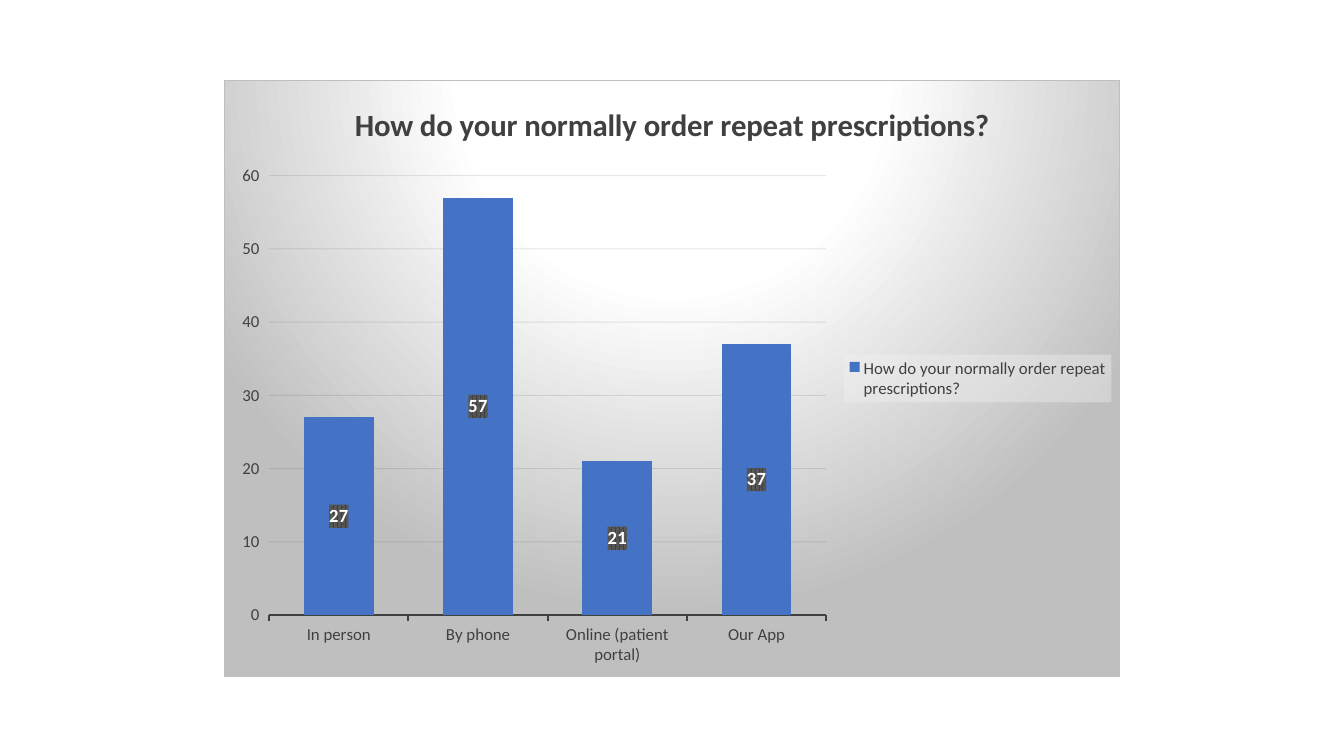
from dataclasses import dataclass

from pptx import Presentation
from pptx.chart.data import CategoryChartData
from pptx.dml.color import RGBColor
from pptx.enum.chart import XL_CHART_TYPE, XL_LABEL_POSITION, XL_LEGEND_POSITION, XL_TICK_MARK
from pptx.oxml import parse_xml
from pptx.oxml.ns import nsdecls
from pptx.util import Inches, Pt

COLUMNS = XL_CHART_TYPE.COLUMN_CLUSTERED
CENTER = XL_LABEL_POSITION.CENTER
RIGHT = XL_LEGEND_POSITION.RIGHT
OUTSIDE = XL_TICK_MARK.OUTSIDE
NO_TICK = XL_TICK_MARK.NONE

QUESTION = "How do your normally order repeat prescriptions?"
ANSWERS = {"In person": 27, "By phone": 57, "Online (patient portal)": 21, "Our App": 37}


@dataclass(frozen=True)
class Theme:
    font: str = "Calibri"
    text: str = "404040"
    bar: str = "4472C4"
    white: str = "FFFFFF"
    edge: str = "BFBFBF"
    grid: str = "0D0D0D"
    legend_fill: str = "F2F2F2"
    label_stripe: str = "595959"
    title_size: float = 22
    label_size: float = 13.3
    text_size: float = 12


class SlideBuilder:
    def __init__(self, slide, theme):
        self.slide = slide
        self.theme = theme

    def style_font(self, font, size, color, bold=False):
        font.name = self.theme.font
        font.size = Pt(size)
        font.bold = bold
        font.color.rgb = RGBColor.from_string(color)

    def color_xml(self, color, alpha=100):
        return f'<a:srgbClr val="{color}"><a:alpha val="{alpha * 1000}"/></a:srgbClr>'

    def add_background(self, element, fill, line="<a:ln><a:noFill/></a:ln>"):
        properties = parse_xml(f'<c:spPr {nsdecls("c", "a")}>{fill}{line}</c:spPr>')
        element.xpath("./c:txPr")[0].addprevious(properties)

    def column_chart(self, question, answers, left, top, width, height):
        data = CategoryChartData()
        data.categories = list(answers)
        data.add_series(question, list(answers.values()))
        chart = self.slide.shapes.add_chart(COLUMNS, left, top, width, height, data).chart
        self.style_font(chart.font, self.theme.text_size, self.theme.text)
        self.chart_area(chart)
        self.chart_title(chart, question)
        self.bars(chart.plots[0])
        self.axes(chart)
        self.legend(chart)

    def chart_area(self, chart):
        stops = "".join(
            f'<a:gs pos="{position * 1000}">{self.color_xml(color)}</a:gs>'
            for position, color in ((0, self.theme.white), (39, self.theme.white), (100, self.theme.edge))
        )
        fill = (
            f'<a:gradFill><a:gsLst>{stops}</a:gsLst><a:path path="circle">'
            '<a:fillToRect l="50000" t="-80000" r="50000" b="180000"/></a:path></a:gradFill>'
        )
        border = f'<a:ln w="{Pt(0.75)}"><a:solidFill>{self.color_xml(self.theme.edge)}</a:solidFill></a:ln>'
        self.add_background(chart._chartSpace, fill, border)

    def chart_title(self, chart, text):
        chart.has_title = True
        chart.chart_title.include_in_layout = False
        paragraph = chart.chart_title.text_frame.paragraphs[0]
        paragraph.text = text
        self.style_font(paragraph.font, self.theme.title_size, self.theme.text, True)

    def bars(self, plot):
        plot.gap_width = 100
        plot.vary_by_categories = False
        series = plot.series[0]
        series.format.fill.solid()
        series.format.fill.fore_color.rgb = RGBColor.from_string(self.theme.bar)
        labels = series.data_labels
        labels.show_value = True
        labels.position = CENTER
        self.style_font(labels.font, self.theme.label_size, self.theme.white, True)
        fill = (
            f'<a:pattFill prst="pct75"><a:fgClr>{self.color_xml(self.theme.text)}</a:fgClr>'
            f"<a:bgClr>{self.color_xml(self.theme.label_stripe)}</a:bgClr></a:pattFill>"
        )
        self.add_background(labels._element, fill)

    def axes(self, chart):
        for axis in (chart.category_axis, chart.value_axis):
            self.style_font(axis.tick_labels.font, self.theme.text_size, self.theme.text)
            axis.minor_tick_mark = NO_TICK
            axis.major_tick_mark = OUTSIDE
        baseline = chart.category_axis.format.line
        baseline.width = Pt(1.5)
        baseline.color.rgb = RGBColor.from_string(self.theme.text)
        value_axis = chart.value_axis
        value_axis.minimum_scale = 0
        value_axis.maximum_scale = 60
        value_axis.major_unit = 10
        value_axis.format.line.fill.background()
        grid = value_axis.major_gridlines.format.line
        grid.width = Pt(0.75)
        grid.color.rgb = RGBColor.from_string(self.theme.grid)
        grid_color = value_axis._element.xpath("./c:majorGridlines//a:srgbClr")[0]
        grid_color.append(parse_xml(f'<a:alpha {nsdecls("a")} val="10000"/>'))

    def legend(self, chart):
        chart.has_legend = True
        legend = chart.legend
        legend.position = RIGHT
        legend.include_in_layout = False
        self.style_font(legend.font, self.theme.text_size, self.theme.text)
        fill = f"<a:solidFill>{self.color_xml(self.theme.legend_fill, 39)}</a:solidFill>"
        self.add_background(legend._element, fill)


def main():
    presentation = Presentation()
    presentation.slide_width = Inches(13.33)
    presentation.slide_height = Inches(7.5)
    slide = presentation.slides.add_slide(presentation.slide_layouts[6])
    builder = SlideBuilder(slide, Theme())
    builder.column_chart(QUESTION, ANSWERS, Inches(2.22), Inches(0.79), Inches(8.89), Inches(5.93))
    presentation.save("out.pptx")


if __name__ == "__main__":
    main()
